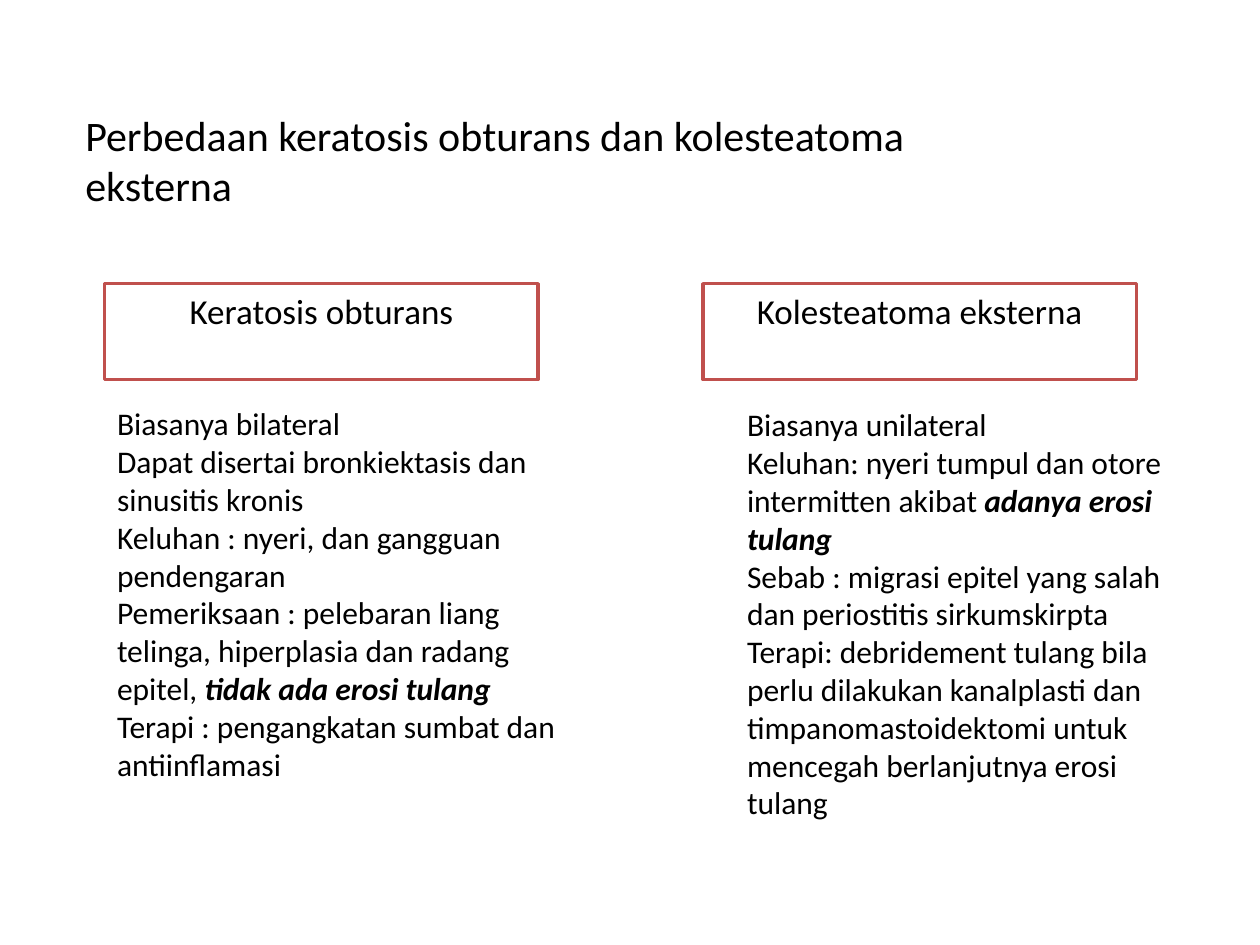
from dataclasses import dataclass

from pptx import Presentation
from pptx.dml.color import RGBColor as RGB
from pptx.enum.shapes import MSO_SHAPE as Shape
from pptx.enum.text import MSO_ANCHOR as Anchor, PP_ALIGN as Align
from pptx.util import Cm, Pt


@dataclass(frozen=True)
class Theme:
    face: str = "Calibri"
    ink: RGB = RGB(0x00, 0x00, 0x00)
    paper: RGB = RGB(0xFF, 0xFF, 0xFF)
    edge: RGB = RGB(0xC0, 0x50, 0x4D)
    title: int = 24
    head: int = 20
    body: int = 18
    rule: int = 2


THEME = Theme()

TITLE = "Perbedaan keratosis obturans dan kolesteatoma eksterna"

# Each column: head, head left, body left, body top, paragraphs.
# A paragraph is a list of runs; every second run is stressed.
COLS = [
    ("Keratosis obturans", 2.11, 2.11, 8.03, [
        ["Biasanya bilateral"],
        ["Dapat disertai bronkiektasis dan sinusitis kronis"],
        ["Keluhan : nyeri, dan gangguan pendengaran"],
        ["Pemeriksaan : pelebaran liang telinga, hiperplasia dan radang epitel, ",
         "tidak ada erosi tulang"],
        ["Terapi : pengangkatan sumbat dan antiinflamasi"],
    ]),
    ("Kolesteatoma eksterna", 14.17, 14.81, 8.05, [
        ["Biasanya unilateral"],
        ["Keluhan: nyeri tumpul dan otore intermitten akibat ",
         "adanya erosi tulang"],
        ["Sebab : migrasi epitel yang salah dan periostitis sirkumskirpta"],
        ["Terapi: debridement tulang bila perlu dilakukan kanalplasti dan "
         "timpanomastoidektomi untuk mencegah berlanjutnya erosi tulang"],
    ]),
]


def fill_text(frame, paras, size, align=Align.LEFT):
    frame.word_wrap = True
    frame.vertical_anchor = Anchor.TOP
    for i, runs in enumerate(paras):
        para = frame.add_paragraph() if i else frame.paragraphs[0]
        para.alignment = align
        for j, words in enumerate(runs):
            run = para.add_run()
            run.text = words
            stress = j % 2 == 1
            look = {"name": THEME.face, "size": Pt(size),
                    "bold": stress, "italic": stress}
            for key, value in look.items():
                setattr(run.font, key, value)
            run.font.color.rgb = THEME.ink


def add_text(slide, place, paras, size):
    box = slide.shapes.add_textbox(*map(Cm, place))
    fill_text(box.text_frame, paras, size)


def add_head(slide, place, words):
    box = slide.shapes.add_shape(Shape.RECTANGLE, *map(Cm, place))
    box.shadow.inherit = False
    box.fill.solid()
    box.fill.fore_color.rgb = THEME.paper
    box.line.color.rgb = THEME.edge
    box.line.width = Pt(THEME.rule)
    fill_text(box.text_frame, [[words]], THEME.head, Align.CENTER)


def main():
    deck = Presentation()
    deck.slide_width, deck.slide_height = Cm(25.4), Cm(19.05)
    slide = deck.slides.add_slide(deck.slide_layouts[6])

    # Columns
    for head, left, inner, top, paras in COLS:
        add_text(slide, (inner, top, 9.35, 8.08), paras, THEME.body)
        add_head(slide, (left, 5.72, 8.74, 1.93), head)

    # Title
    add_text(slide, (1.47, 2.08, 19.15, 3), [[TITLE]], THEME.title)

    deck.save("out.pptx")


if __name__ == "__main__":
    main()
